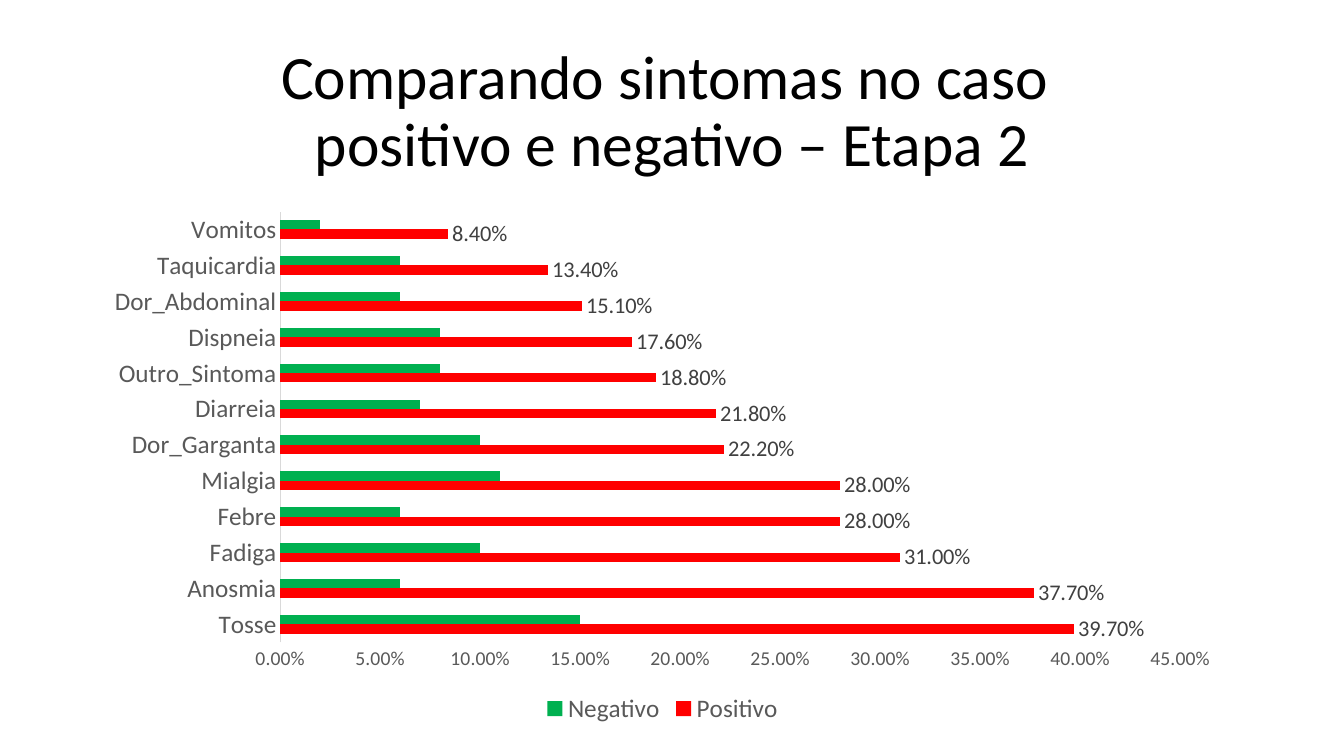
"""Build a slide comparing symptoms in positive and negative cases."""
from pptx import Presentation
from pptx import util as u
from pptx.chart.data import CategoryChartData
from pptx.dml.color import RGBColor
from pptx.enum import chart as charts, text

PX = 914400 / 100.8
FONT = "Calibri"
PERCENT = "0.00%"
COLOURS = {
    "title": "000000", "axis": "595959", "label": "404040", "line": "D9D9D9",
    "Positivo": "FF0000", "Negativo": "00B050",
}
TITLE = ["Comparando sintomas no caso ", "positivo e negativo – Etapa 2"]
SYMPTOMS = {
    "Tosse": (0.397, 0.15), "Anosmia": (0.377, 0.06),
    "Fadiga": (0.31, 0.1), "Febre": (0.28, 0.06),
    "Mialgia": (0.28, 0.11), "Dor_Garganta": (0.222, 0.1),
    "Diarreia": (0.218, 0.07), "Outro_Sintoma": (0.188, 0.08),
    "Dispneia": (0.176, 0.08), "Dor_Abdominal": (0.151, 0.06),
    "Taquicardia": (0.134, 0.06), "Vomitos": (0.084, 0.02),
}


def px(*lengths):
    """Turn pixel lengths into a list of EMU."""
    return [u.Emu(round(length * PX)) for length in lengths]


def style_font(font, size, colour):
    """Set the typeface, size and colour of a font."""
    font.name = FONT
    font.size = u.Pt(size)
    font.color.rgb = RGBColor.from_string(COLOURS[colour])


def add_title(page, lines, place):
    """Add a centred title broken into the given lines."""
    box = page.shapes.add_textbox(*px(*place))
    frame = box.text_frame
    frame.word_wrap = True
    frame.vertical_anchor = text.MSO_ANCHOR.MIDDLE
    para = frame.paragraphs[0]
    para.alignment = text.PP_ALIGN.CENTER
    para.line_spacing = 0.9
    for index, line in enumerate(lines):
        if index:
            para.add_line_break()
        span = para.add_run()
        span.text = line
        style_font(span.font, 44, "title")


def style_axis(axis, size):
    """Remove the gridlines and tick marks of an axis and set its font."""
    axis.has_major_gridlines = False
    axis.major_tick_mark = axis.minor_tick_mark = charts.XL_TICK_MARK.NONE
    style_font(axis.tick_labels.font, size, "axis")


def add_labels(series):
    """Show the values of a series at the ends of its bars."""
    labels = series.data_labels
    labels.show_value = True
    labels.number_format = PERCENT
    labels.number_format_is_linked = False
    labels.position = charts.XL_LABEL_POSITION.OUTSIDE_END
    style_font(labels.font, 16, "label")


def add_bars(page, symptoms, place):
    """Add the clustered bar chart of symptom shares."""
    data = CategoryChartData(number_format=PERCENT)
    data.categories = list(symptoms)
    for name, shares in zip(("Positivo", "Negativo"), zip(*symptoms.values())):
        data.add_series(name, shares)
    kind = charts.XL_CHART_TYPE.BAR_CLUSTERED
    chart = page.shapes.add_chart(kind, *px(*place), data).chart
    chart.has_title = False
    style_font(chart.font, 10, "title")

    style_axis(chart.category_axis, 18)
    line = chart.category_axis.format.line
    line.color.rgb = RGBColor.from_string(COLOURS["line"])
    line.width = u.Pt(0.75)
    style_axis(chart.value_axis, 14)
    chart.value_axis.format.line.fill.background()
    chart.value_axis.minimum_scale = 0
    chart.value_axis.maximum_scale = 0.45
    chart.value_axis.major_unit = 0.05
    chart.value_axis.tick_labels.number_format = PERCENT
    chart.value_axis.tick_labels.number_format_is_linked = False

    chart.has_legend = True
    chart.legend.position = charts.XL_LEGEND_POSITION.BOTTOM
    chart.legend.include_in_layout = False
    style_font(chart.legend.font, 18, "axis")

    plot = chart.plots[0]
    plot.vary_by_categories = False
    plot.gap_width = 182
    plot.overlap = 0
    for series in plot.series:
        series.format.fill.solid()
        series.format.fill.fore_color.rgb = RGBColor.from_string(COLOURS[series.name])
        series.invert_if_negative = False
    add_labels(plot.series[0])


def main():
    """Build and save the deck."""
    deck = Presentation()
    deck.slide_width, deck.slide_height = px(1344, 756)
    page = deck.slides.add_slide(deck.slide_layouts[6])
    add_title(page, TITLE, (92, 40, 1160, 146))
    add_bars(page, SYMPTOMS, (92, 201, 1141, 528))
    deck.save("out.pptx")


if __name__ == "__main__":
    main()
